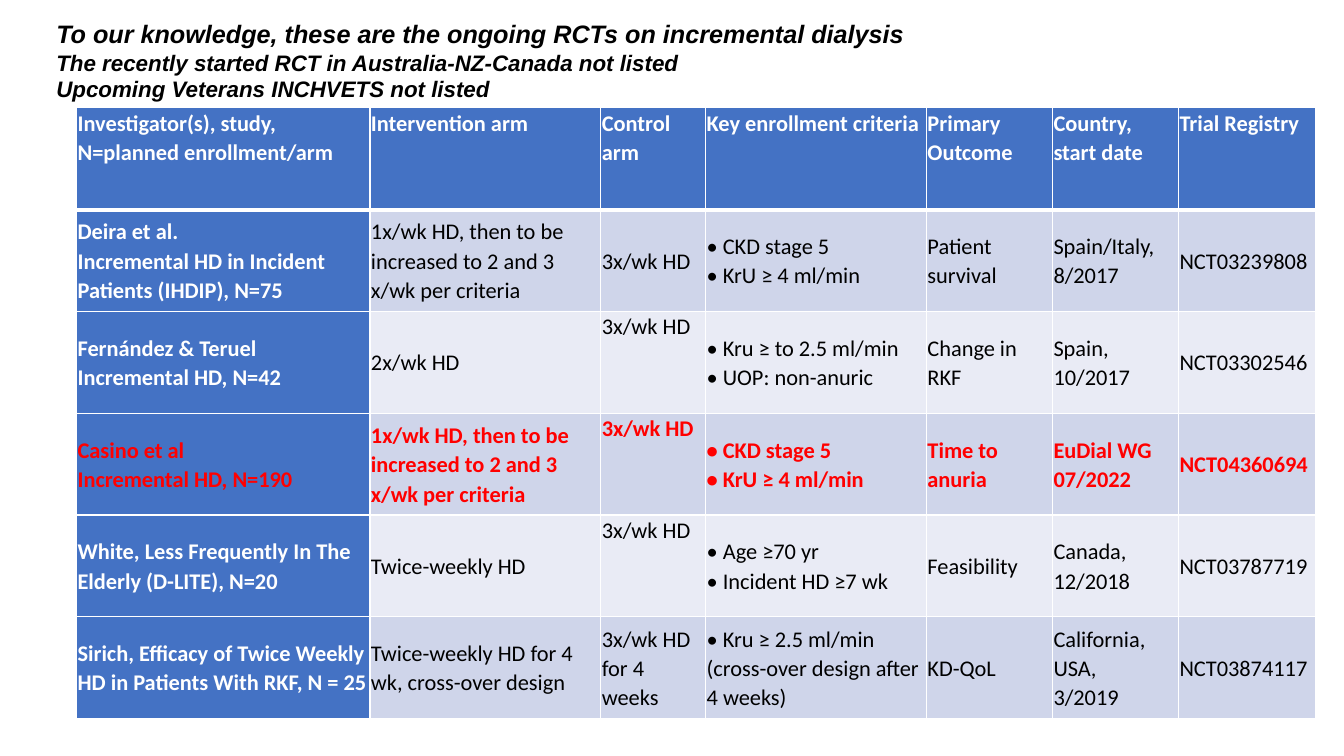
from lxml import etree
from pptx import Presentation
from pptx.dml.color import RGBColor
from pptx.enum.text import MSO_ANCHOR, MSO_AUTO_SIZE
from pptx.oxml.ns import qn
from pptx.util import Inches, Pt

TOP = MSO_ANCHOR.TOP
MIDDLE = MSO_ANCHOR.MIDDLE
GROW = MSO_AUTO_SIZE.SHAPE_TO_FIT_TEXT

COLORS = {
    "white": "FFFFFF",
    "black": "000000",
    "red": "FF0000",
    "blue": "4472C4",
    "band_dark": "CFD5EA",
    "band_light": "E9EBF5",
}

COLUMN_WIDTHS = [2.91, 2.29, 1.04, 2.19, 1.25, 1.25, 1.36]
ROW_HEIGHT = 1.01
CONTROL_COLUMN = 2
HIGHLIGHT_ROW = 3
TOP_CONTROL_ROWS = (2, 3, 4)

HEADINGS = [
    ("To our knowledge, these are the ongoing RCTs on incremental dialysis", 18),
    ("The recently started RCT in Australia-NZ-Canada not listed", 16),
    ("Upcoming Veterans INCHVETS not listed", 16),
]

TRIALS = [
    [["Investigator(s), study,\vN=planned enrollment/arm"], ["Intervention arm"],
     ["Control arm"], ["Key enrollment criteria"], ["Primary Outcome"],
     ["Country, start date"], ["Trial Registry"]],
    [["Deira et al.\vIncremental HD in Incident Patients (IHDIP), N=75"],
     ["1x/wk HD, then to be increased to 2 and 3 x/wk per criteria"],
     ["3x/wk HD"], ["• CKD stage 5", "• KrU ≥ 4 ml/min"],
     ["Patient survival"], ["Spain/Italy,\v8/2017"], ["NCT03239808"]],
    [["Fernández & Teruel\vIncremental HD, N=42"], ["2x/wk HD"],
     ["3x/wk HD"], ["• Kru ≥ to 2.5 ml/min", "• UOP: non-anuric"],
     ["Change in RKF"], ["Spain,\v10/2017"], ["NCT03302546"]],
    [["Casino et al\vIncremental HD, N=190"],
     ["1x/wk HD, then to be increased to 2 and 3 x/wk per criteria"],
     ["3x/wk HD"], ["• CKD stage 5", "• KrU ≥ 4 ml/min"],
     ["Time to anuria"], ["EuDial WG", "07/2022"], ["NCT04360694"]],
    [["White, Less Frequently In The Elderly (D-LITE), N=20"],
     ["Twice-weekly HD"], ["3x/wk HD"],
     ["• Age ≥70 yr", "• Incident HD ≥7 wk"],
     ["Feasibility"], ["Canada,\v12/2018"], ["NCT03787719"]],
    [["Sirich, Efficacy of Twice Weekly HD in Patients With RKF, N = 25"],
     ["Twice-weekly HD for 4 wk, cross-over design"],
     ["3x/wk HD for 4 weeks"],
     ["• Kru ≥ 2.5 ml/min", "(cross-over design after 4 weeks)"],
     ["KD-QoL"], ["California, USA,\v3/2019"], ["NCT03874117"]],
]


def write_text(para, text, font="Calibri", size=16, color="black",
               bold=False, italic=False, spacing=None, indent=None):
    para.text = text
    if spacing:
        para.line_spacing = spacing
    if indent:
        para._p.get_or_add_pPr().set("indent", str(Inches(indent)))
    for line_break in para._p.findall(qn("a:br")):
        etree.SubElement(line_break, qn("a:rPr"), sz=str(size * 100))
    for span in para.runs:
        span.font.name = font
        span.font.size = Pt(size)
        span.font.bold = bold
        span.font.italic = italic
        span.font.color.rgb = RGBColor.from_string(COLORS[color])


def paragraph_at(frame, index):
    return frame.paragraphs[0] if index == 0 else frame.add_paragraph()


def add_headings(page):
    box = page.shapes.add_textbox(Inches(0.21), Inches(0.13), Inches(12.52), Inches(0.94))
    frame = box.text_frame
    frame.word_wrap = True
    frame.auto_size = GROW
    frame.vertical_anchor = MIDDLE
    for index, (text, size) in enumerate(HEADINGS):
        write_text(paragraph_at(frame, index), text, font="Arial", size=size,
                   bold=True, italic=True, indent=0.25)


def set_borders(cell, top, bottom):
    properties = cell._tc.get_or_add_tcPr()
    for side, width in (("L", 1), ("R", 1), ("T", top), ("B", bottom)):
        line = etree.SubElement(properties, qn(f"a:ln{side}"), w=str(Pt(width)))
        fill = etree.SubElement(line, qn("a:solidFill"))
        etree.SubElement(fill, qn("a:srgbClr"), val=COLORS["white"])


def cell_look(row, column):
    heading = row == 0 or column == 0
    highlight = row == HIGHLIGHT_ROW
    band = "band_dark" if row % 2 else "band_light"
    fill = "blue" if heading else band
    color = "red" if highlight else "white" if heading else "black"
    at_top = row == 0 or (column == CONTROL_COLUMN and row in TOP_CONTROL_ROWS)
    return fill, color, heading or highlight, TOP if at_top else MIDDLE


def fill_cell(cell, lines, row, column):
    fill, color, bold, anchor = cell_look(row, column)
    set_borders(cell, top=3 if row == 1 else 1, bottom=3 if row == 0 else 1)
    cell.fill.solid()
    cell.fill.fore_color.rgb = RGBColor.from_string(COLORS[fill])
    cell.vertical_anchor = anchor
    cell.margin_left = cell.margin_right = Inches(0.01)
    cell.margin_top = cell.margin_bottom = 0
    for index, text in enumerate(lines):
        write_text(paragraph_at(cell.text_frame, index), text, color=color,
                   bold=bold, spacing=1.07)


def add_trial_table(page):
    frame = page.shapes.add_table(
        len(TRIALS), len(COLUMN_WIDTHS), Inches(0.76), Inches(1.07),
        Inches(sum(COLUMN_WIDTHS)), Inches(ROW_HEIGHT * len(TRIALS)))
    table = frame.table
    for column, width in zip(table.columns, COLUMN_WIDTHS):
        column.width = Inches(width)
    for row, trial in enumerate(TRIALS):
        table.rows[row].height = Inches(ROW_HEIGHT)
        for column, lines in enumerate(trial):
            fill_cell(table.cell(row, column), lines, row, column)


def main():
    deck = Presentation()
    deck.slide_width = Inches(13.33)
    deck.slide_height = Inches(7.5)
    page = deck.slides.add_slide(deck.slide_layouts[6])
    add_trial_table(page)
    add_headings(page)
    deck.save("out.pptx")


if __name__ == "__main__":
    main()
